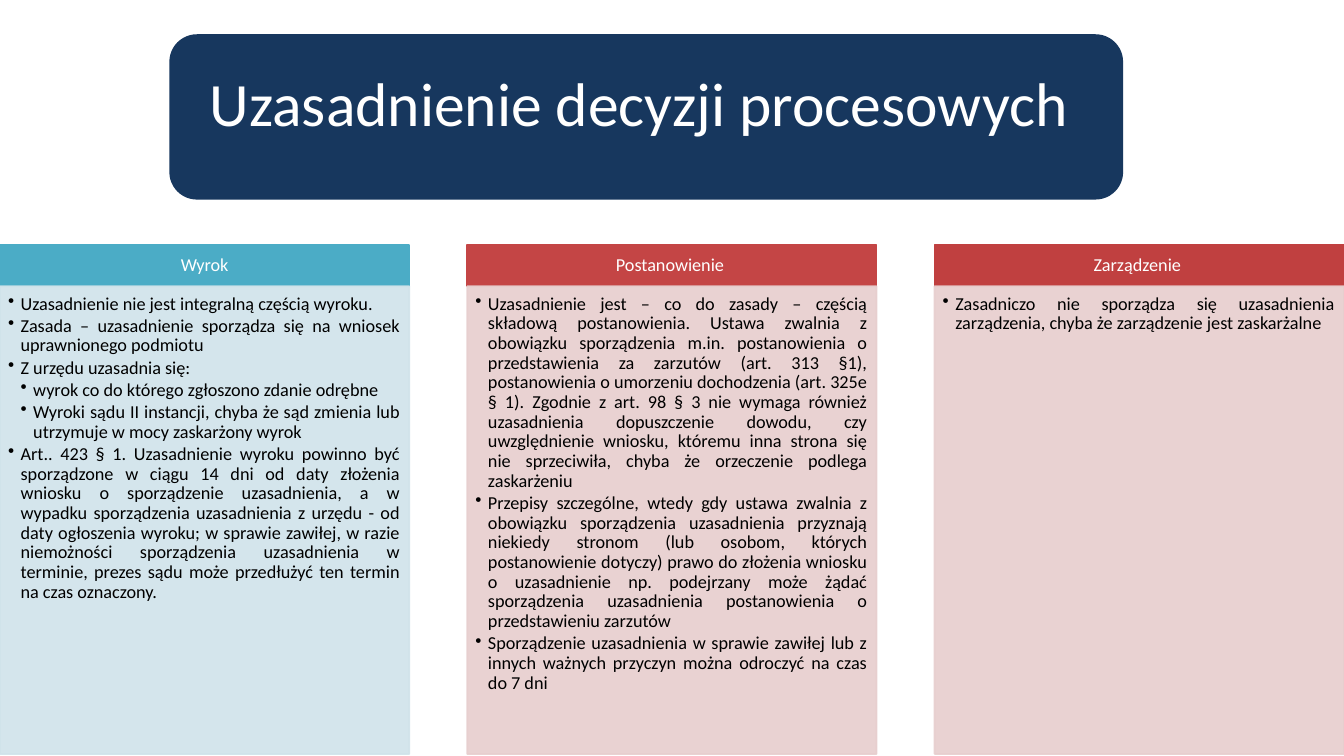
from lxml.etree import SubElement
from pptx import Presentation
from pptx.dml.color import RGBColor
from pptx.enum.shapes import MSO_SHAPE
from pptx.enum.text import MSO_ANCHOR, PP_ALIGN
from pptx.oxml.ns import qn
from pptx.util import Inches, Pt

WHITE = RGBColor(0xFF, 0xFF, 0xFF)
BLACK = RGBColor(0x00, 0x00, 0x00)
NAVY = RGBColor(0x17, 0x37, 0x5E)
TEAL = RGBColor(0x4B, 0xAC, 0xC6)
RED = RGBColor(0xC4, 0x45, 0x45)
DARK_RED = RGBColor(0xC0, 0x40, 0x40)
PALE_TEAL = RGBColor(0xD0, 0xE3, 0xEA)
PALE_RED = RGBColor(0xE7, 0xCE, 0xCE)

SLIDE_WIDTH, SLIDE_HEIGHT = 13.33, 7.5
COLUMN_WIDTH = 4.06
HEADING_TOP, HEADING_HEIGHT = 2.43, 0.41
BODY_TOP, BODY_HEIGHT = HEADING_TOP + HEADING_HEIGHT, 4.64
HANGING = 0.125

TITLE_FRAME = dict(vertical_anchor=MSO_ANCHOR.MIDDLE, margin_bottom=Inches(0.35))
HEADING_FRAME = dict(vertical_anchor=MSO_ANCHOR.MIDDLE, margin_left=Inches(0.1),
                     margin_right=Inches(0.1), margin_top=Inches(0.06),
                     margin_bottom=Inches(0.06))
BODY_FRAME = dict(vertical_anchor=MSO_ANCHOR.TOP, margin_left=Inches(0.08),
                  margin_right=Inches(0.1), margin_top=Inches(0.08),
                  margin_bottom=Inches(0.11))
TITLE_PARAGRAPH = dict(alignment=PP_ALIGN.CENTER)
HEADING_PARAGRAPH = dict(alignment=PP_ALIGN.CENTER, line_spacing=0.9)
BODY_PARAGRAPH = dict(alignment=PP_ALIGN.JUSTIFY, line_spacing=0.9, space_after=Pt(1.8))

COLUMNS = [
    ("Wyrok", TEAL, PALE_TEAL, [
        (1, "Uzasadnienie nie jest integralną częścią wyroku."),
        (1, "Zasada – uzasadnienie sporządza się na wniosek uprawnionego podmiotu"),
        (1, "Z urzędu uzasadnia się:"),
        (2, "wyrok co do którego zgłoszono zdanie odrębne"),
        (2, "Wyroki sądu II instancji, chyba że sąd zmienia lub utrzymuje w mocy "
            "zaskarżony wyrok"),
        (1, "Art.. 423 § 1. Uzasadnienie wyroku powinno być sporządzone w ciągu 14 dni "
            "od daty złożenia wniosku o sporządzenie uzasadnienia, a w wypadku "
            "sporządzenia uzasadnienia z urzędu - od daty ogłoszenia wyroku; w sprawie "
            "zawiłej, w razie niemożności sporządzenia uzasadnienia w terminie, prezes "
            "sądu może przedłużyć ten termin na czas oznaczony."),
    ]),
    ("Postanowienie ", RED, PALE_RED, [
        (1, "Uzasadnienie jest – co do zasady – częścią składową postanowienia. Ustawa "
            "zwalnia z obowiązku sporządzenia m.in. postanowienia o przedstawienia za "
            "zarzutów (art. 313 §1), postanowienia o umorzeniu dochodzenia (art. 325e "
            "§ 1). Zgodnie z art. 98 § 3 nie wymaga również uzasadnienia dopuszczenie "
            "dowodu, czy uwzględnienie wniosku, któremu inna strona się nie sprzeciwiła, "
            "chyba że orzeczenie podlega zaskarżeniu"),
        (1, "Przepisy szczególne, wtedy gdy ustawa zwalnia z obowiązku sporządzenia "
            "uzasadnienia przyznają niekiedy stronom (lub osobom, których postanowienie "
            "dotyczy) prawo do złożenia wniosku o uzasadnienie np. podejrzany może żądać "
            "sporządzenia uzasadnienia postanowienia o przedstawieniu zarzutów"),
        (1, "Sporządzenie uzasadnienia w sprawie zawiłej lub z innych ważnych przyczyn "
            "można odroczyć na czas do 7 dni"),
    ]),
    ("Zarządzenie ", DARK_RED, PALE_RED, [
        (1, "Zasadniczo nie sporządza się uzasadnienia zarządzenia, chyba że zarządzenie "
            "jest zaskarżalne"),
    ]),
]


def apply_format(target, values):
    """Set every attribute named in a dict of format values."""
    for name, value in values.items():
        setattr(target, name, value)


def add_panel(slide, preset, bounds, color, frame_format):
    """Add a filled shape ready for text."""
    panel = slide.shapes.add_shape(preset, *map(Inches, bounds))
    panel.shadow.inherit = False
    panel.fill.solid()
    panel.fill.fore_color.rgb = color
    panel.line.color.rgb = color
    panel.line.width = Pt(1.25)
    panel.text_frame.word_wrap = True
    apply_format(panel.text_frame, frame_format)
    return panel


def make_translucent(panel, percent):
    """Give the fill and outline of a panel the same opacity."""
    for color in panel.element.spPr.iter(qn("a:srgbClr")):
        SubElement(color, qn("a:alpha"), val=str(percent * 1000))


def add_bullet(paragraph, level):
    """Give a paragraph a hanging bullet at its level."""
    properties = paragraph._p.get_or_add_pPr()
    properties.set("marL", str(Inches(HANGING * level)))
    properties.set("indent", str(-Inches(HANGING)))
    SubElement(properties, qn("a:buChar"), char="•")
    paragraph.level = level


def write(paragraph, text, paragraph_format, size, color):
    """Write formatted text into a paragraph."""
    apply_format(paragraph, paragraph_format)
    run = paragraph.add_run()
    run.text = text
    apply_format(run.font, dict(name="Calibri", size=Pt(size)))
    run.font.color.rgb = color


def add_title(slide, text):
    """Add the rounded title banner."""
    banner = add_panel(slide, MSO_SHAPE.ROUNDED_RECTANGLE, (1.68, 0.34, 9.46, 1.64),
                       NAVY, TITLE_FRAME)
    banner.line.fill.background()
    write(banner.text_frame.paragraphs[0], text, TITLE_PARAGRAPH, 44, WHITE)


def add_column(slide, left, heading_text, strong, pale, points):
    """Add a heading with a panel of bullet points below it."""
    heading = add_panel(slide, MSO_SHAPE.RECTANGLE,
                        (left, HEADING_TOP, COLUMN_WIDTH, HEADING_HEIGHT),
                        strong, HEADING_FRAME)
    write(heading.text_frame.paragraphs[0], heading_text, HEADING_PARAGRAPH, 13, WHITE)
    body = add_panel(slide, MSO_SHAPE.RECTANGLE,
                     (left, BODY_TOP, COLUMN_WIDTH, BODY_HEIGHT), pale, BODY_FRAME)
    make_translucent(body, 90)
    for index, (level, text) in enumerate(points):
        frame = body.text_frame
        paragraph = frame.add_paragraph() if index else frame.paragraphs[0]
        add_bullet(paragraph, level)
        write(paragraph, text, BODY_PARAGRAPH, 13, BLACK)


def main():
    """Build and save the slide."""
    presentation = Presentation()
    presentation.slide_width = Inches(SLIDE_WIDTH)
    presentation.slide_height = Inches(SLIDE_HEIGHT)
    slide = presentation.slides.add_slide(presentation.slide_layouts[6])
    pitch = (SLIDE_WIDTH - COLUMN_WIDTH) / (len(COLUMNS) - 1)
    for index, column in enumerate(COLUMNS):
        add_column(slide, index * pitch, *column)
    add_title(slide, "Uzasadnienie decyzji procesowych ")
    presentation.save("out.pptx")


if __name__ == "__main__":
    main()
